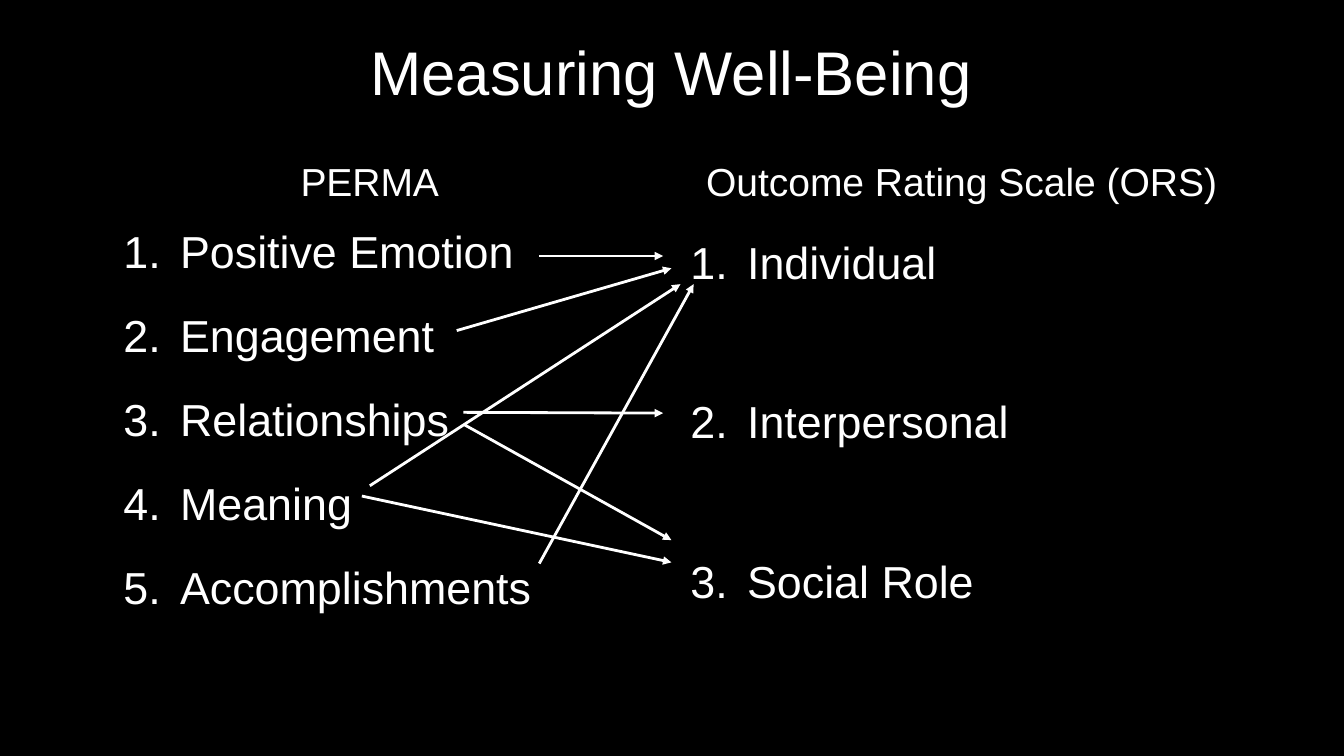
from lxml import etree
from pptx import Presentation
from pptx.dml.color import RGBColor
from pptx.enum.shapes import MSO_CONNECTOR
from pptx.enum.text import MSO_ANCHOR, PP_ALIGN
from pptx.oxml.ns import qn
from pptx.util import Cm, Pt

LINE = MSO_CONNECTOR.STRAIGHT
TOP, MID, LOW = MSO_ANCHOR.TOP, MSO_ANCHOR.MIDDLE, MSO_ANCHOR.BOTTOM
LEFT, CENTER = PP_ALIGN.LEFT, PP_ALIGN.CENTER
COLORS = {"back": "000000", "ink": "FFFFFF"}
FONT = "Arial"

# Content: box (left, top, width, height in cm) with its text
TITLE = ("Measuring Well-Being", (2.54, 0.15, 28.75, 3.53))
HEADS = [
    ("PERMA", (2.54, 2.97, 13.56, 2.29)),
    ("Outcome Rating Scale (ORS)", (17.48, 2.97, 13.51, 2.29)),
]
PERMA = ["Positive Emotion", "Engagement", "Relationships", "Meaning",
         "Accomplishments"]
ORS = ["Individual", "Interpersonal", "Social Role"]

# Arrows from a PERMA item to an ORS item: start and end in cm
ARROWS = [
    ((13.59, 6.45), (16.71, 6.45)),
    ((11.51, 8.33), (16.92, 6.76)),
    ((9.32, 12.24), (17.15, 7.16)),
    ((11.68, 10.69), (16.92, 13.61)),
    ((9.12, 12.5), (16.92, 14.17)),
    ((11.68, 10.39), (16.71, 10.41)),
    ((13.59, 14.2), (17.48, 7.16)),
]


def add_text(slide, lines, box, size, anchor=TOP, align=LEFT, space=1.0, gap=0):
    """Add a text box with one paragraph a line, gap points apart."""
    frame = slide.shapes.add_textbox(*map(Cm, box)).text_frame
    frame.word_wrap = True
    frame.vertical_anchor = anchor
    for i, line in enumerate(lines):
        para = frame.add_paragraph() if i else frame.paragraphs[0]
        para.alignment = align
        para.line_spacing = space
        para.space_before = Pt(gap if i else 0)
        run = para.add_run()
        run.text = line
        run.font.size = Pt(size)
        run.font.name = FONT
        run.font.color.rgb = RGBColor.from_string(COLORS["ink"])
    return frame


def add_list(slide, lines, box, indent, space, gap):
    """Add a numbered list with a hanging indent."""
    frame = add_text(slide, lines, box, 32, space=space, gap=gap)
    for para in frame.paragraphs:
        props = para._p.get_or_add_pPr()
        props.set("marL", str(Cm(indent)))
        props.set("indent", str(-Cm(1.43)))
        etree.SubElement(props, qn("a:buFont"), typeface=FONT)
        etree.SubElement(props, qn("a:buAutoNum"), type="arabicPeriod")


def add_arrow(slide, start, end):
    arrow = slide.shapes.add_connector(LINE, *map(Cm, start + end))
    arrow.line.width = Pt(2)
    arrow.line.color.rgb = RGBColor.from_string(COLORS["ink"])
    etree.SubElement(arrow.line._get_or_add_ln(), qn("a:tailEnd"),
                     type="triangle")
    etree.SubElement(arrow._element.spPr, qn("a:effectLst"))


def main():
    deck = Presentation()
    deck.slide_width, deck.slide_height = Cm(33.87), Cm(19.05)
    slide = deck.slides.add_slide(deck.slide_layouts[6])
    fill = slide.background.fill
    fill.solid()
    fill.fore_color.rgb = RGBColor.from_string(COLORS["back"])

    # Title and column heads
    text, box = TITLE
    add_text(slide, [text], box, 44, MID, CENTER, 0.9)
    for text, box in HEADS:
        add_text(slide, [text], box, 27.9, LOW, CENTER, 0.8)

    # Numbered lists
    add_list(slide, PERMA, (2.54, 5.51, 14.2, 10.57), 1.75, 1.0, 21.6)
    add_list(slide, ORS, (17.15, 5.51, 14.15, 9.75), 1.43, 1.2, 68)

    # Arrows
    for start, end in ARROWS:
        add_arrow(slide, start, end)

    deck.save("out.pptx")


if __name__ == "__main__":
    main()
